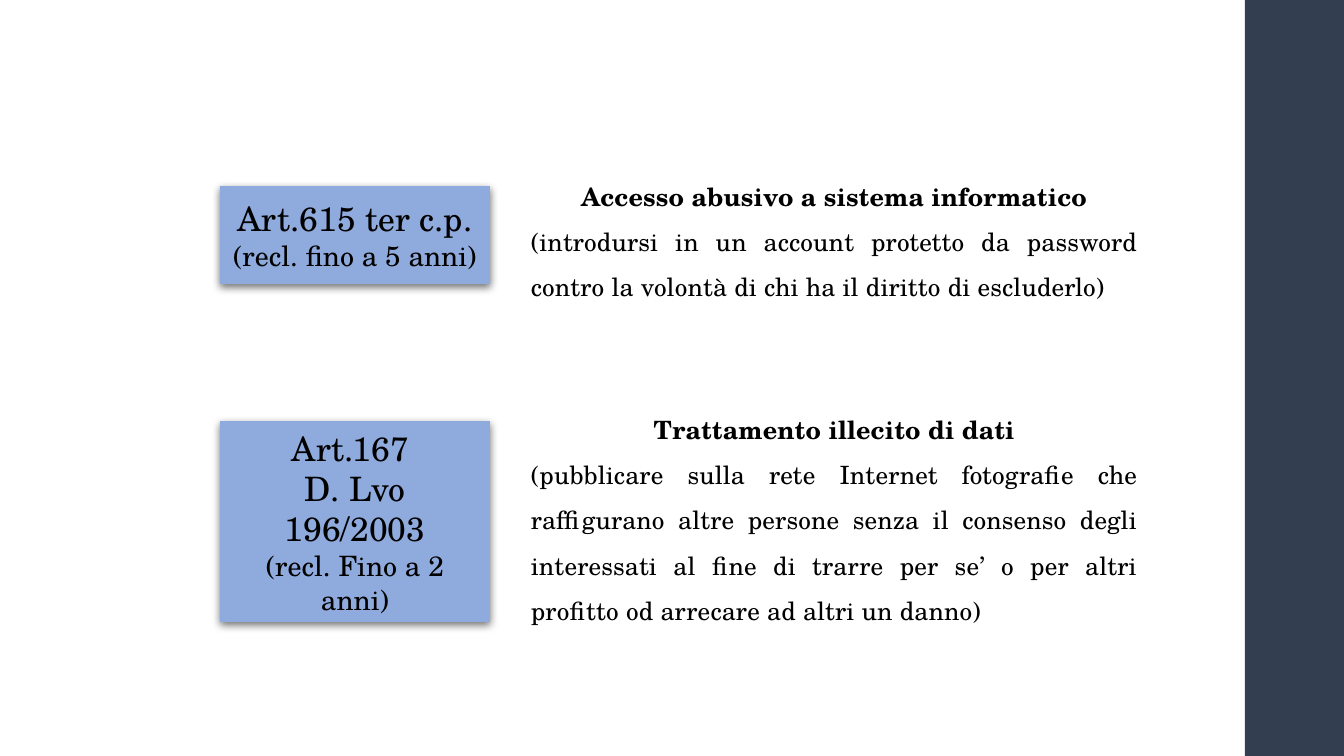
"""Build a slide that pairs two articles of law with the offences they punish."""
from lxml import etree
from pptx import Presentation
from pptx.dml.color import RGBColor
from pptx.enum.shapes import MSO_SHAPE
from pptx.enum.text import MSO_ANCHOR, MSO_AUTO_SIZE, PP_ALIGN
from pptx.oxml.ns import qn
from pptx.util import Pt

RECT = MSO_SHAPE.RECTANGLE
MIDDLE = MSO_ANCHOR.MIDDLE
GROW = MSO_AUTO_SIZE.SHAPE_TO_FIT_TEXT
CENTER, JUSTIFY = PP_ALIGN.CENTER, PP_ALIGN.JUSTIFY

WIDTH, HEIGHT = 1344, 756
SCALE = 12192000 / WIDTH
FONT = "TeX Gyre Schola"
COLORS = {"band": "333F50", "card": "8FAADC", "text": "000000", "shadow": "000000"}

ROWS = [
    {
        "card": (220, 186, 270, 98),
        "article": [("Art.615 ter c.p.", 24), ("(recl. fino a 5 anni)", 20)],
        "note": (521, 161, 627, 147),
        "crime": "Accesso abusivo a sistema informatico",
        "lead": 1.5,
        "detail": "(introdursi in un account protetto da password contro la "
                  "volontà di chi ha il diritto di escluderlo)",
    },
    {
        "card": (220, 421, 270, 201),
        "article": [("Art.167 ", 24), ("D. Lvo 196/2003", 24), ("(recl. Fino a 2 anni)", 20)],
        "note": (521, 409, 627, 224),
        "crime": "Trattamento illecito di dati",
        "lead": 1.0,
        "detail": "(pubblicare sulla rete Internet fotografie che raffigurano altre "
                  "persone senza il consenso degli interessati al fine di trarre per "
                  "se’ o per altri profitto od arrecare ad altri un danno)",
    },
]


def emu(px):
    """Turn pixels into EMU."""
    return round(px * SCALE)


def add_rect(slide, box, color):
    """Add a plain filled rectangle without outline or shadow."""
    shape = slide.shapes.add_shape(RECT, *map(emu, box))
    shape.shadow.inherit = False
    shape.fill.solid()
    shape.fill.fore_color.rgb = RGBColor.from_string(COLORS[color])
    shape.line.fill.background()
    return shape


def add_shadow(shape):
    """Give a shape a soft shadow that falls straight down."""
    effects = shape._element.spPr.find(qn("a:effectLst"))
    outer = etree.SubElement(
        effects, qn("a:outerShdw"), blurRad=str(Pt(6)), dist=str(Pt(2)),
        dir="5400000", algn="ctr", rotWithShape="0")
    tint = etree.SubElement(outer, qn("a:srgbClr"), val=COLORS["shadow"])
    etree.SubElement(tint, qn("a:alpha"), val="55000")


def add_line(frame, index, text, size, align=CENTER, bold=False):
    """Write one paragraph into a text frame and return it."""
    para = frame.add_paragraph() if index else frame.paragraphs[0]
    para.add_run().text = text
    para.alignment = align
    para.font.name = FONT
    para.font.size = Pt(size)
    para.font.bold = bold
    para.font.color.rgb = RGBColor.from_string(COLORS["text"])
    return para


def add_card(slide, box, lines):
    """Add a shadowed card that names an article and its penalty."""
    card = add_rect(slide, box, "card")
    add_shadow(card)
    frame = card.text_frame
    frame.word_wrap = True
    frame.vertical_anchor = MIDDLE
    for index, (text, size) in enumerate(lines):
        add_line(frame, index, text, size)


def add_note(slide, box, crime, lead, detail):
    """Add the name of an offence above its description."""
    frame = slide.shapes.add_textbox(*map(emu, box)).text_frame
    frame.word_wrap = True
    frame.auto_size = GROW
    head = add_line(frame, 0, crime, 18, bold=True)
    head.line_spacing = lead
    body = add_line(frame, 1, detail, 18, JUSTIFY)
    body.line_spacing = 1.5
    for para in (head, body):
        para.runs[0].font._element.set("spc", "10")


def main():
    """Build and save the slide."""
    deck = Presentation()
    deck.slide_width, deck.slide_height = emu(WIDTH), emu(HEIGHT)
    slide = deck.slides.add_slide(deck.slide_layouts[6])
    add_rect(slide, (1245, 0, 99, HEIGHT), "band")
    for row in ROWS:
        add_card(slide, row["card"], row["article"])
        add_note(slide, row["note"], row["crime"], row["lead"], row["detail"])
    deck.save("out.pptx")


if __name__ == "__main__":
    main()
